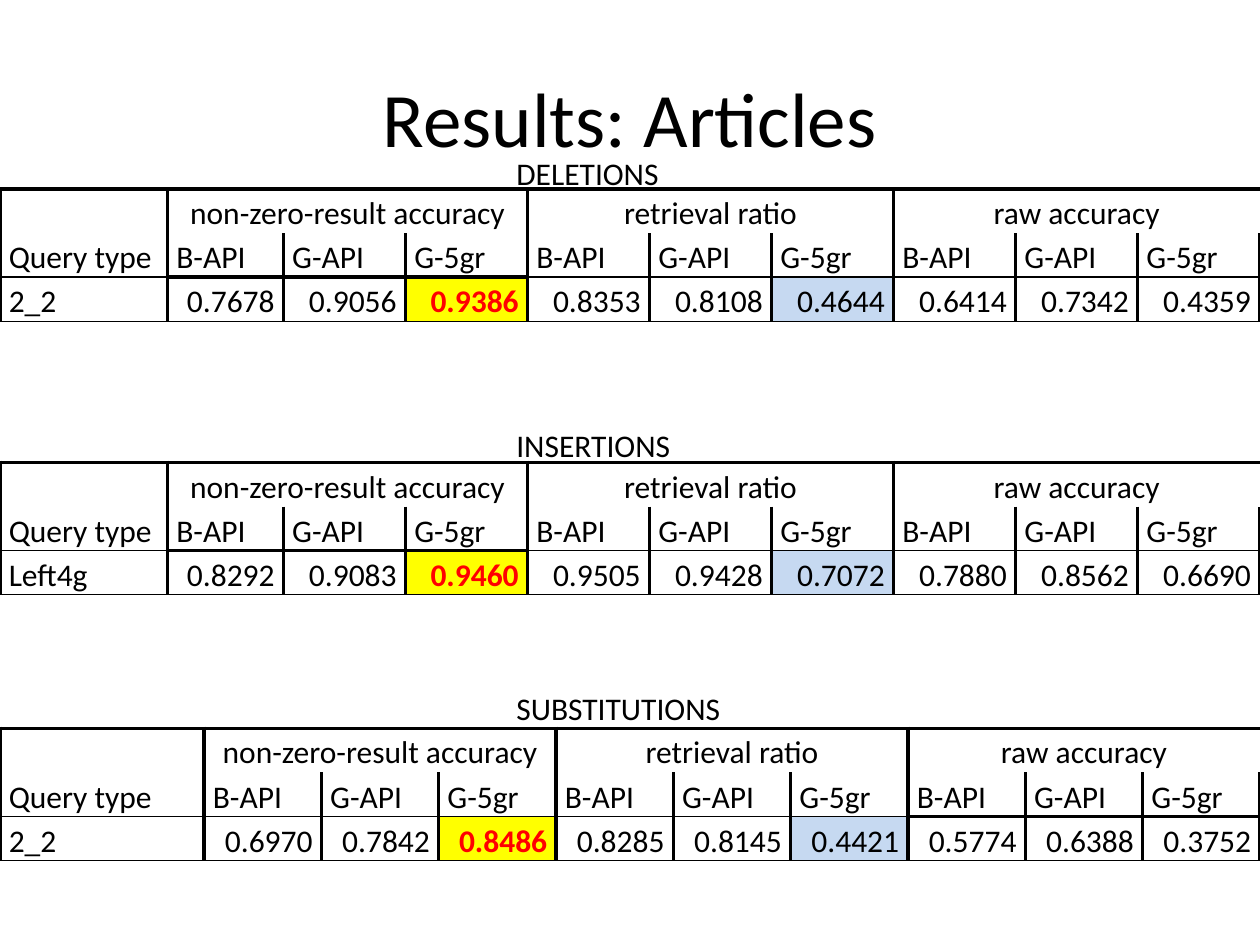
from lxml import etree
from pptx import Presentation
from pptx import util as u
from pptx.dml import color
from pptx.enum import text
from pptx.oxml import ns

INK, RED, GOLD, SKY = "000000", "FF0000", "FFFF00", "C6D9F1"
LEFT, MID, RIGHT = text.PP_ALIGN.LEFT, text.PP_ALIGN.CENTER, text.PP_ALIGN.RIGHT
GROUPS = ["non-zero-result accuracy", "retrieval ratio", "raw accuracy"]
SOURCES = ["B-API", "G-API", "G-5gr"]
THICK, THIN = 2.25, 1


def tint(code):
    return color.RGBColor.from_string(code)


class Deck:
    font, size, line = "Calibri", 18, 0.35

    def __init__(self, wide, high):
        self.prs = Presentation()
        self.prs.slide_width, self.prs.slide_height = u.Inches(wide), u.Inches(high)
        self.wide = wide
        self.slide = self.prs.slides.add_slide(self.prs.slide_layouts[6])

    def put(self, frame, words, align=LEFT, size=size, ink=INK, bold=False):
        frame.text = words
        para = frame.paragraphs[0]
        para.alignment = align
        face = para.runs[0].font
        face.name, face.size, face.bold = self.font, u.Pt(size), bold
        face.color.rgb = tint(ink)
        return para

    def label(self, words, x, y, w, h, wrap=False, **look):
        box = self.slide.shapes.add_textbox(*map(u.Inches, (x, y, w, h)))
        frame = box.text_frame
        frame.word_wrap = wrap
        if wrap:
            frame.vertical_anchor = text.MSO_ANCHOR.MIDDLE
        else:
            frame.auto_size = text.MSO_AUTO_SIZE.SHAPE_TO_FIT_TEXT
        self.put(frame, words, **look)

    def edges(self, cell, **sides):
        props = cell._tc.get_or_add_tcPr()
        for side, width in sides.items():
            edge = etree.SubElement(props, ns.qn("a:ln" + side), w=str(u.Pt(width)))
            if width:
                fill = etree.SubElement(edge, ns.qn("a:solidFill"))
                etree.SubElement(fill, ns.qn("a:srgbClr"), val=INK)
            else:
                etree.SubElement(edge, ns.qn("a:noFill"))

    def frame(self, cell, row, col, heavy):
        split = THICK if col and (col - 1) // 3 == heavy else THIN
        first = row or col % 3 == 1 or col == 0
        last = row or col % 3 == 0
        self.edges(
            cell,
            L=THICK if first else 0,
            R=THICK if last else 0,
            T=(THICK, 0, split)[row],
            B=(0, split, THIN)[row],
        )

    def fill(self, cell, words, paint=None, **look):
        cell.margin_left = cell.margin_right = u.Inches(0.07)
        cell.margin_top = cell.margin_bottom = 0
        cell.vertical_anchor = text.MSO_ANCHOR.BOTTOM
        if paint:
            cell.fill.solid()
            cell.fill.fore_color.rgb = tint(paint)
        else:
            cell.fill.background()
        if words:
            self.put(cell.text_frame, words, **look).line_spacing = 1.15

    def table(self, top, first, query, values, heavy):
        place = map(u.Inches, (0, top, self.wide, 3 * self.line))
        grid = self.slide.shapes.add_table(3, 10, *place).table
        grid.first_row = grid.horz_banding = False
        rest = (self.wide - sum(first)) / (10 - len(first))
        for col, part in enumerate(grid.columns):
            part.width = u.Inches(first[col] if col < len(first) else rest)
        for part in grid.rows:
            part.height = u.Inches(self.line)

        heads = ["Query type"] + [w for name in GROUPS for w in (name, "", "")]
        rows = [heads, [""] + SOURCES * 3, [query] + values.split()]
        for row, line in enumerate(rows):
            for col, words in enumerate(line):
                cell = grid.cell(row, col)
                self.frame(cell, row, col, heavy)
                look = {}
                if col and row != 1:
                    look["align"] = RIGHT if row else MID
                if row == 2 and col == 3:
                    look.update(paint=GOLD, ink=RED, bold=True)
                if row == 2 and col == 6:
                    look["paint"] = SKY
                self.fill(cell, words, **look)
        grid.cell(0, 0).merge(grid.cell(1, 0))
        for col in (1, 4, 7):
            grid.cell(0, col).merge(grid.cell(0, col + 2))


def main():
    deck = Deck(10, 7.5)
    deck.label("Results: Articles", 0.5, 0.3, 9, 1.25, wrap=True, align=MID, size=44)
    tests = [
        ("DELETIONS", 1.17, 1.34, 1.5, [1.33, 0.92], "2_2", 0,
         "0.7678 0.9056 0.9386 0.8353 0.8108 0.4644 0.6414 0.7342 0.4359"),
        ("INSERTIONS", 3.33, 1.43, 3.67, [1.33, 0.92], "Left4g", 0,
         "0.8292 0.9083 0.9460 0.9505 0.9428 0.7072 0.7880 0.8562 0.6690"),
        ("SUBSTITUTIONS", 5.42, 1.83, 5.78, [1.62], "2_2", 2,
         "0.6970 0.7842 0.8486 0.8285 0.8145 0.4421 0.5774 0.6388 0.3752"),
    ]
    for name, y, w, top, first, query, heavy, values in tests:
        deck.table(top, first, query, values, heavy)
        deck.label(name, 4, y, w, 0.4)
    deck.prs.save("out.pptx")


if __name__ == "__main__":
    main()
